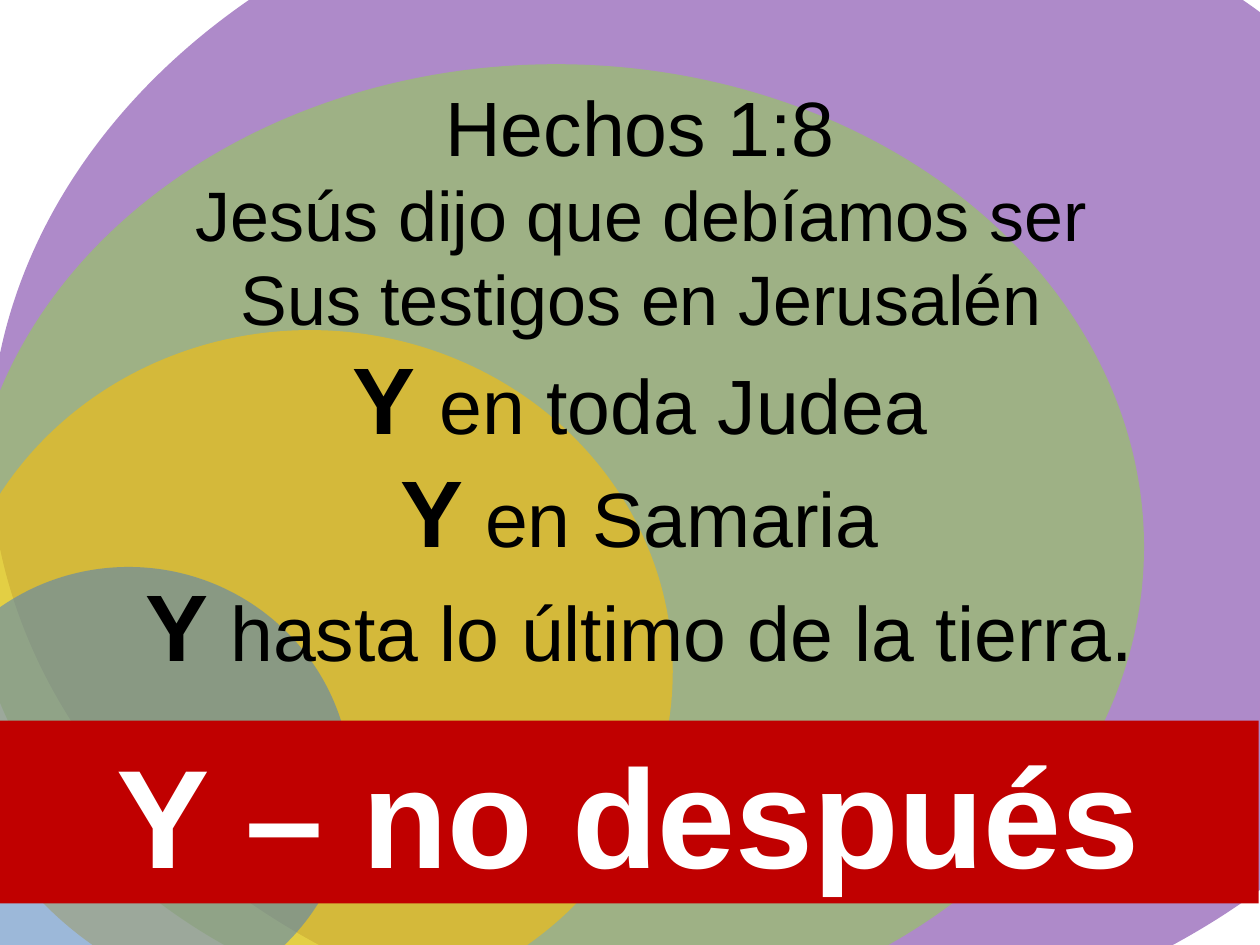
from lxml.etree import SubElement
from pptx import Presentation
from pptx.dml.color import RGBColor
from pptx.enum.shapes import MSO_SHAPE
from pptx.enum.text import MSO_ANCHOR, MSO_AUTO_SIZE, PP_ALIGN
from pptx.oxml.ns import qn
from pptx.util import Inches, Pt

THEME = {
    "font": "Arial", "ink": "000000", "light": "FFFFFF", "band": "C00000",
    "ring_opacity": 56,
    "banner": 80, "connective": 54, "large": 44, "medium": 40,
}

# Widening circles of witness, from the outermost in: colour and left, top, width, height
RINGS = [
    ("7030A0", (-0.08, -1.17, 12, 9.5)),
    ("92D050", (-0.25, 0.51, 9.33, 7.66)),
    ("FFC000", (-0.42, 2.62, 5.76, 5.42)),
    ("4F81BD", (-0.75, 4.5, 3.54, 3.5)),
]
BANNER = "Y – no después"
BANNER_BOX = (-0.01, 5.72, 10, 1.45)
VERSE_BOX = (0.5, 0.58, 9.33, 5.05)
INTRO = [
    (["Hechos 1:8 "], "large"),
    (["Jesús dijo que debíamos ser ", "Sus testigos en Jerusalén "], "medium"),
]
PLACES = [("Y ", "en toda Judea "), ("Y", " en Samaria "),
          ("Y", " hasta lo último de la tierra. ")]


def add_text(paragraph, text, *, size, color="ink", bold=False):
    run = paragraph.add_run()
    run.text = text
    font = run.font
    font.name, font.size, font.bold = THEME["font"], Pt(THEME[size]), bold
    font.color.rgb = RGBColor.from_string(THEME[color])


def fill_solid(shape, color):
    shape.fill.solid()
    shape.fill.fore_color.rgb = RGBColor.from_string(color)


def place(placeholder, box, anchor):
    """Position a placeholder and return its text frame, ready for text."""
    placeholder.left, placeholder.top, placeholder.width, placeholder.height = map(Inches, box)
    frame = placeholder.text_frame
    frame.word_wrap = True
    frame.auto_size = MSO_AUTO_SIZE.NONE
    frame.vertical_anchor = anchor
    return frame


def center_plain(paragraph):
    """Centre a paragraph without bullet, indent or spacing."""
    properties = paragraph._p.get_or_add_pPr()
    properties.set("marL", "0")
    properties.set("indent", "0")
    SubElement(properties, qn("a:buNone"))
    paragraph.alignment = PP_ALIGN.CENTER
    paragraph.space_before = Pt(0)


def add_ring(slide, depth, color, box):
    """Add a translucent ellipse behind the text, at the given stacking depth."""
    ring = slide.shapes.add_shape(MSO_SHAPE.OVAL, *map(Inches, box))
    ring.shadow.inherit = False
    ring.line.fill.background()
    fill_solid(ring, color)
    color_element = ring._element.spPr.find(qn("a:solidFill"))[0]
    SubElement(color_element, qn("a:alpha"), val=str(THEME["ring_opacity"] * 1000))
    # The tree starts with two property elements
    slide.shapes._spTree.insert(2 + depth, ring._element)


def add_verse(frame):
    count = len(INTRO) + len(PLACES)
    paragraphs = [frame.paragraphs[0]] + [frame.add_paragraph() for _ in range(count - 1)]
    for paragraph in paragraphs:
        center_plain(paragraph)
    for paragraph, (lines, size) in zip(paragraphs, INTRO):
        for number, line in enumerate(lines):
            if number:
                paragraph.add_line_break()
            add_text(paragraph, line, size=size)
    for paragraph, (connective, region) in zip(paragraphs[len(INTRO):], PLACES):
        add_text(paragraph, connective, size="connective", bold=True)
        add_text(paragraph, region, size="large")


def main():
    deck = Presentation()
    deck.slide_width, deck.slide_height = Inches(10), Inches(7.5)
    slide = deck.slides.add_slide(deck.slide_layouts[1])
    for depth, (color, box) in enumerate(RINGS):
        add_ring(slide, depth, color, box)

    banner = slide.shapes.title
    fill_solid(banner, THEME["band"])
    title_line = place(banner, BANNER_BOX, MSO_ANCHOR.MIDDLE).paragraphs[0]
    center_plain(title_line)
    add_text(title_line, BANNER, size="banner", color="light", bold=True)

    add_verse(place(slide.placeholders[1], VERSE_BOX, MSO_ANCHOR.TOP))
    deck.save("out.pptx")


if __name__ == "__main__":
    main()
